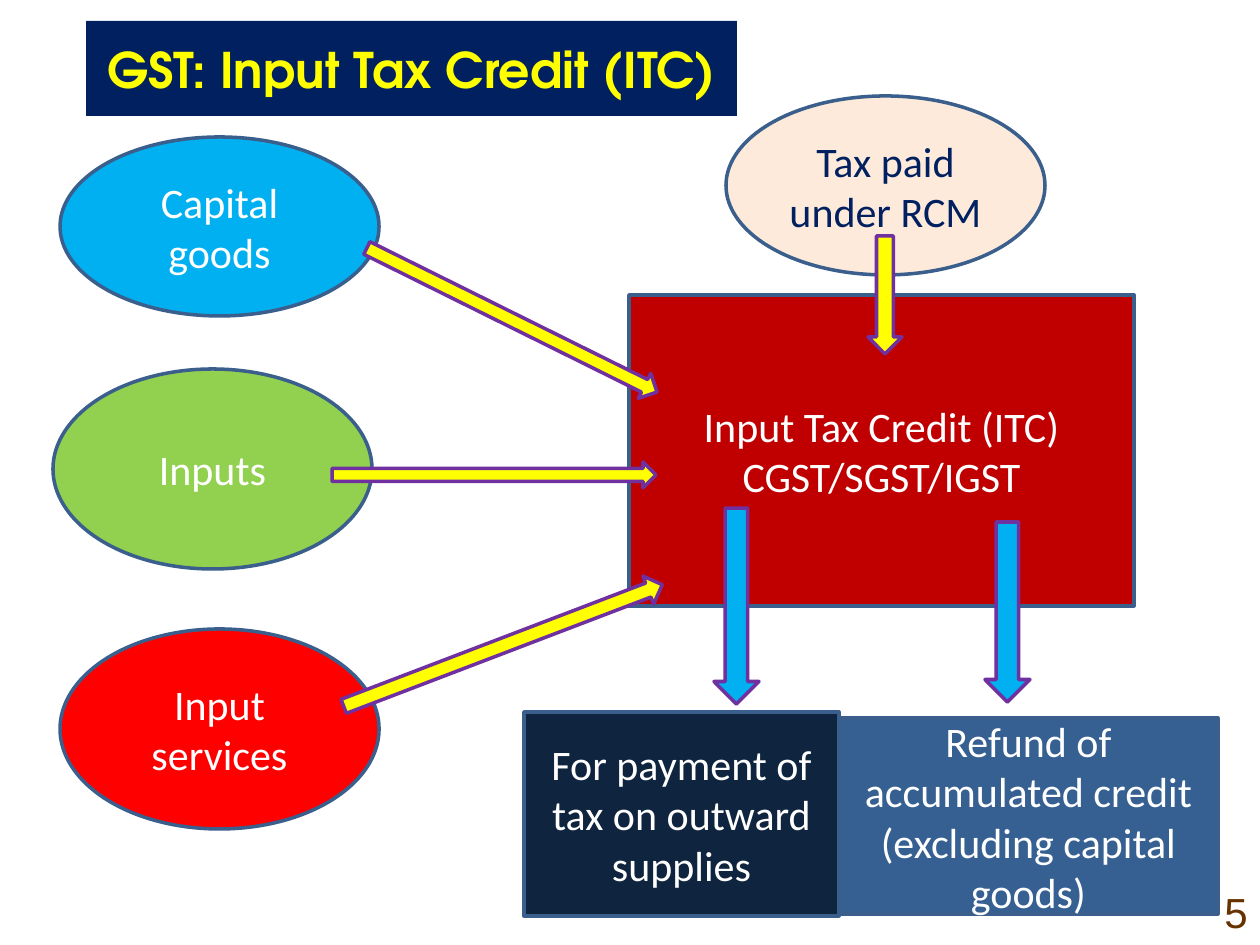
from pptx import Presentation
from pptx.dml.color import RGBColor
from pptx.enum.shapes import MSO_SHAPE
from pptx.enum.text import MSO_ANCHOR, PP_ALIGN
from pptx.util import Emu, Pt

RECT, OVAL, DOWN = MSO_SHAPE.RECTANGLE, MSO_SHAPE.OVAL, MSO_SHAPE.DOWN_ARROW
MID = MSO_ANCHOR.MIDDLE
MID_X, RIGHT = PP_ALIGN.CENTER, PP_ALIGN.RIGHT
SCALE = 914400 / 126  # EMU per px

THEME = {
    "navy": "002060", "yellow": "FFFF00", "white": "FFFFFF", "brown": "663300",
    "edge": "3A5F8C", "purple": "7030A0", "crimson": "C00000", "red": "FF0000",
    "sky": "00B0F0", "green": "92D050", "dark": "0F243E", "steel": "376092",
    "cream": "FDEADA",
    "head": 28, "body": 24, "line": 2,
    "font": "Calibri", "head_font": "TeX Gyre Adventor", "num_font": "Arial",
}


def tone(name):
    return RGBColor.from_string(THEME[name])


def write(shape, text, font="font", size="body", color="white", bold=False, align=MID_X):
    frame = shape.text_frame
    frame.word_wrap = True
    frame.vertical_anchor = MID
    frame.text = text
    for para in frame.paragraphs:
        para.alignment = align
        para.font.name = THEME[font]
        para.font.size = Pt(THEME[size])
        para.font.bold = bold
        para.font.color.rgb = tone(color)


def draw(kind, box, fill, line=None):
    shape = slide.shapes.add_shape(kind, *[Emu(round(v * SCALE)) for v in box])
    shape.shadow.inherit = False
    shape.fill.solid()
    shape.fill.fore_color.rgb = tone(fill)
    if line:
        shape.line.color.rgb = tone(line)
        shape.line.width = Pt(THEME["line"])
    else:
        shape.line.fill.background()
    return shape


deck = Presentation()
deck.slide_width, deck.slide_height = Emu(round(1260 * SCALE)), Emu(round(945 * SCALE))
slide = deck.slides.add_slide(deck.slide_layouts[6])

# Slide number
num = slide.shapes.add_textbox(*[Emu(round(v * SCALE)) for v in (1092, 879, 168, 66)])
write(num, "5", font="num_font", color="brown", align=RIGHT)

# Title
title = draw(RECT, (86, 21, 651, 95), "navy")
write(title, "GST: Input Tax Credit (ITC)", font="head_font", size="head",
      color="yellow", bold=True)

# Credit pool, its sources and its uses
nodes = [
    (RECT, (629, 295, 505, 311), "crimson", "Input Tax Credit (ITC)\nCGST/SGST/IGST"),
    (OVAL, (60, 137, 319, 179), "sky", "Capital goods"),
    (OVAL, (53, 369, 319, 200), "green", "Inputs"),
    (OVAL, (60, 629, 319, 200), "red", "Input services"),
    (RECT, (524, 712, 315, 204), "dark", "For payment of tax on outward supplies"),
    (RECT, (839, 718, 379, 196), "steel",
     "Refund of accumulated credit (excluding capital goods)"),
    (OVAL, (726, 96, 319, 179), "cream", "Tax paid under RCM"),
]
for kind, box, fill, text in nodes:
    node = draw(kind, box, fill, "edge")
    write(node, text, color="navy" if fill == "cream" else "white")

# Block arrows: yellow into the pool, blue out of it
arrows = [
    ((498, 158, 28, 324), 296.4, "yellow"),
    ((714, 508, 45, 196), 0, "sky"),
    ((481, 313, 26, 324), 270, "yellow"),
    ((488, 475, 30, 341), 249.1, "yellow"),
    ((985, 522, 45, 180), 0, "sky"),
    ((868, 236, 34, 118), 0, "yellow"),
]
for box, turn, fill in arrows:
    draw(DOWN, box, fill, "purple").rotation = turn

deck.save("out.pptx")
